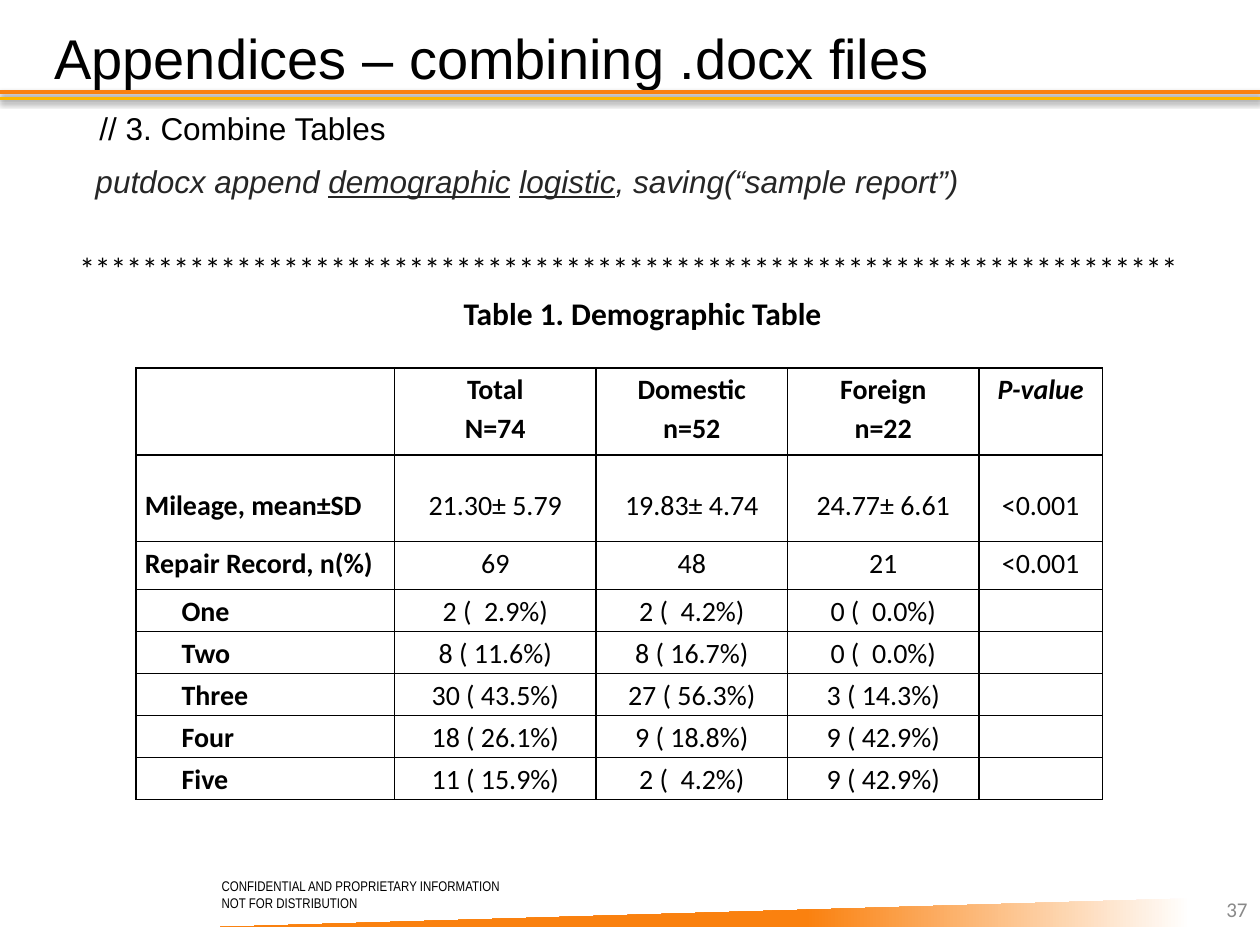
from dataclasses import dataclass

from lxml import etree
from pptx import Presentation
from pptx.dml.color import RGBColor
from pptx.enum.shapes import MSO_CONNECTOR, MSO_SHAPE
from pptx.enum.text import MSO_ANCHOR, PP_ALIGN
from pptx.oxml import parse_xml
from pptx.oxml.ns import nsdecls, qn
from pptx.util import Pt

LEFT, CENTER, RIGHT = PP_ALIGN.LEFT, PP_ALIGN.CENTER, PP_ALIGN.RIGHT
TOP, MIDDLE = MSO_ANCHOR.TOP, MSO_ANCHOR.MIDDLE
STRAIGHT = MSO_CONNECTOR.STRAIGHT
RIGHT_TRIANGLE = MSO_SHAPE.RIGHT_TRIANGLE


@dataclass(frozen=True)
class Theme:
    """Colours, fonts and type sizes of the slide."""
    black: str = "000000"
    white: str = "FFFFFF"
    orange: str = "FA810F"
    amber: str = "FCB800"
    code: str = "262626"
    number: str = "898989"
    sans: str = "Arial"
    narrow: str = "Arial Narrow"
    table: str = "Calibri"
    title_size: int = 32
    body_size: int = 18
    cell_size: int = 16
    number_size: int = 12
    notice_size: int = 8


THEME = Theme()

COLUMN_WIDTHS = [147.6, 115.2, 109.4, 109.4, 70.6]
ROW_HEIGHTS = [49.7, 49.7, 27.3] + [24] * 5
ROWS = [
    ["", "Total\vN=74", "Domestic\vn=52", "Foreign\vn=22", "P-value"],
    ["Mileage, mean±SD", "21.30± 5.79", "19.83± 4.74", "24.77± 6.61", "<0.001"],
    ["Repair Record, n(%)", "69", "48", "21", "<0.001"],
    ["One", "2 (  2.9%)", "2 (  4.2%)", "0 (  0.0%)", ""],
    ["Two", "8 ( 11.6%)", "8 ( 16.7%)", "0 (  0.0%)", ""],
    ["Three", "30 ( 43.5%)", "27 ( 56.3%)", "3 ( 14.3%)", ""],
    ["Four", "18 ( 26.1%)", "9 ( 18.8%)", "9 ( 42.9%)", ""],
    ["Five", "11 ( 15.9%)", "2 (  4.2%)", "9 ( 42.9%)", ""],
]
MEAN_ROW, FIRST_LEVEL_ROW, P_VALUE_COLUMN = 1, 3, 4


def points(*values):
    """Convert numbers to lengths in points."""
    return [Pt(value) for value in values]


def apply_format(target, values):
    """Set each named attribute on the target."""
    for name, value in values.items():
        setattr(target, name, value)


def format_font(font, family, size, color=THEME.black, **values):
    """Give a font its family, size, colour and further attributes."""
    apply_format(font, {"name": family, "size": Pt(size), **values})
    font.color.rgb = RGBColor.from_string(color)


def add_text(slide, box, lines, family, size, color=THEME.black,
             align=LEFT, anchor=TOP, wrap=True, **values):
    """Place a text box whose lines share one format."""
    frame = slide.shapes.add_textbox(*points(*box)).text_frame
    apply_format(frame, {"word_wrap": wrap, "vertical_anchor": anchor})
    for index, line in enumerate(lines):
        paragraph = frame.paragraphs[0] if index == 0 else frame.add_paragraph()
        paragraph.alignment = align
        run = paragraph.add_run()
        run.text = line
        format_font(run.font, family, size, color, **values)
    return frame


def add_rule(slide, left, top, width, color):
    """Draw a horizontal rule with a soft shadow below it."""
    rule = slide.shapes.add_connector(STRAIGHT, *points(left, top, left + width, top))
    rule.line.width = Pt(2)
    rule.line.color.rgb = RGBColor.from_string(color)
    rule.element.spPr.append(parse_xml(
        f'<a:effectLst {nsdecls("a")}>'
        f'<a:outerShdw blurRad="{Pt(3.1)}" dist="{Pt(1.6)}" dir="5400000" rotWithShape="0">'
        f'<a:srgbClr val="{THEME.black}"><a:alpha val="38000"/></a:srgbClr>'
        '</a:outerShdw></a:effectLst>'))


def add_header(slide, box):
    """Place the title and the two rules beneath it."""
    left, top, width, height = box
    for offset, color in ((0, THEME.orange), (3.6, THEME.amber)):
        add_rule(slide, left, top + height + offset, width, color)
    title = slide.shapes.title
    placement = points(left + 23.8, top + 12.2, 642.2, 41)
    apply_format(title, dict(zip(("left", "top", "width", "height"), placement)))
    title.text_frame.vertical_anchor = MIDDLE
    paragraph = title.text_frame.paragraphs[0]
    paragraph.alignment = LEFT
    run = paragraph.add_run()
    run.text = "Appendices – combining .docx files"
    format_font(run.font, THEME.sans, THEME.title_size)


def add_command(slide, box):
    """Place the code comment, the command and the row of asterisks."""
    left, top, width, height = box
    add_text(slide, (left + 11.5, top, 185, 29), ["// 3. Combine Tables"],
             THEME.sans, THEME.body_size, wrap=False)
    frame = add_text(slide, (left + 9.3, top + 30.2, width, 39.6), ["putdocx append "],
                     THEME.sans, THEME.body_size, THEME.code, italic=True)
    for text, underline in (("demographic", True), (" ", False), ("logistic", True),
                            (", saving(“sample report”)", False)):
        run = frame.paragraphs[0].add_run()
        run.text = text
        format_font(run.font, THEME.sans, THEME.body_size, THEME.code,
                    italic=True, underline=underline)
    add_text(slide, (left, top + height - 29, 660, 29), ["*" * 70],
             THEME.table, THEME.body_size)


def add_borders(cell):
    """Draw a thin line on each side of a table cell."""
    properties = cell._tc.get_or_add_tcPr()
    for index, side in enumerate(("lnL", "lnR", "lnT", "lnB")):
        line = etree.Element(qn(f"a:{side}"), w=str(Pt(1)))
        fill = etree.SubElement(line, qn("a:solidFill"))
        etree.SubElement(fill, qn("a:srgbClr"), val=THEME.black)
        properties.insert(index, line)


def fill_cell(cell, text, row, column):
    """Write one table cell in the format of its row and column."""
    is_label = column == 0
    indent = 21 if is_label and row >= FIRST_LEVEL_ROW else 0
    apply_format(cell, {"margin_left": Pt(5 + indent), "margin_right": Pt(5),
                        "margin_top": 0, "margin_bottom": 0})
    cell.fill.background()
    add_borders(cell)
    paragraph = cell.text_frame.paragraphs[0]
    paragraph.text = text
    apply_format(paragraph, {"alignment": LEFT if is_label else CENTER,
                             "line_spacing": 2.0 if row == MEAN_ROW else 1.15})
    for run in paragraph.runs:
        format_font(run.font, THEME.table, THEME.cell_size, bold=is_label or row == 0,
                    italic=row == 0 and column == P_VALUE_COLUMN)


def add_demographics(slide, box):
    """Place the table caption and the demographic table."""
    left, top, width, height = box
    add_text(slide, (left + 180, top, 220.3, 29), ["Table 1. Demographic Table"],
             THEME.table, THEME.body_size, wrap=False, bold=True)
    table = slide.shapes.add_table(len(ROWS), len(COLUMN_WIDTHS),
                                   *points(left, top + 46, width, height - 46)).table
    apply_format(table, {"first_row": False, "horz_banding": False})
    for column, column_width in zip(table.columns, COLUMN_WIDTHS):
        column.width = Pt(column_width)
    for row, row_height in zip(table.rows, ROW_HEIGHTS):
        row.height = Pt(row_height)
    for row, texts in enumerate(ROWS):
        for column, text in enumerate(texts):
            fill_cell(table.cell(row, column), text, row, column)


def add_footer(slide, box):
    """Place the wedge, the confidentiality notice and the slide number."""
    left, top, width, height = box
    wedge = slide.shapes.add_shape(
        RIGHT_TRIANGLE, *points(left + 116.6, top + height - 26.6, 563.8, 16.6))
    wedge.shadow.inherit = False
    wedge.line.fill.background()
    wedge.element.spPr.xfrm.set("flipH", "1")
    wedge.fill.gradient()
    wedge.fill.gradient_angle = 0
    stops = ((0, THEME.white), (0.39, THEME.orange))
    for stop, (position, color) in zip(wedge.fill.gradient_stops, stops):
        stop.position = position
        stop.color.rgb = RGBColor.from_string(color)
    add_text(slide, (left + 119.5, top, 210.2, 26.6),
             ["CONFIDENTIAL AND PROPRIETARY INFORMATION", "NOT FOR DISTRIBUTION"],
             THEME.narrow, THEME.notice_size)
    add_text(slide, (left + width - 168, top + 7.2, 168, 28.8), ["37"], THEME.table,
             THEME.number_size, THEME.number, align=RIGHT, anchor=MIDDLE)


def main():
    """Build the slide and save it."""
    presentation = Presentation()
    presentation.slide_width, presentation.slide_height = points(720, 540)
    slide = presentation.slides.add_slide(presentation.slide_layouts[5])
    add_header(slide, (0, 0, 720, 52.6))
    add_command(slide, (38.2, 59, 671.8, 109))
    add_demographics(slide, (77.8, 164.2, 552.2, 292.7))
    add_footer(slide, (0, 498.2, 720, 41.8))
    presentation.save("out.pptx")


if __name__ == "__main__":
    main()
